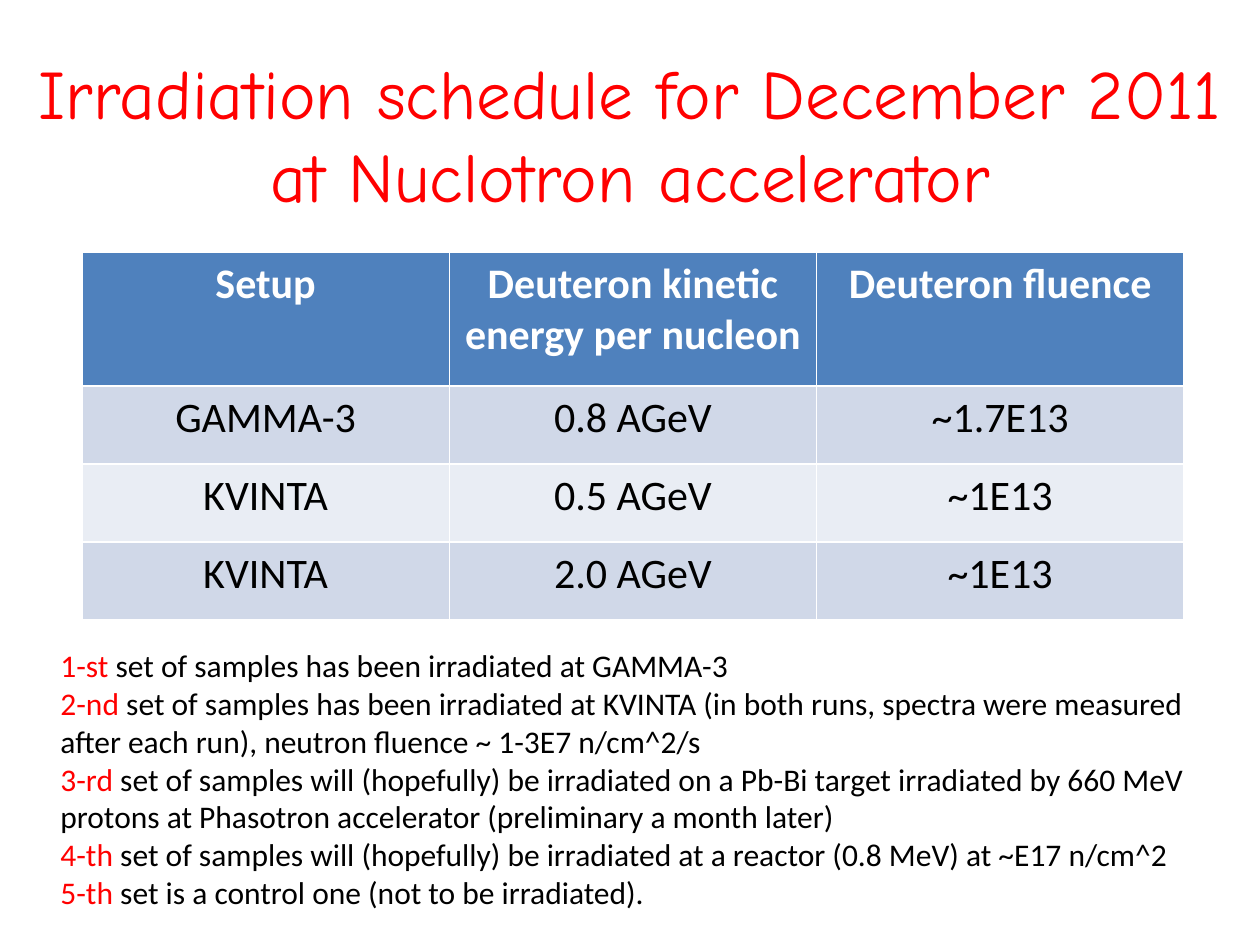
"""Build the irradiation schedule slide with a title, a table and notes on the sample sets."""
from dataclasses import dataclass

from pptx import Presentation
from pptx.dml.color import RGBColor
from pptx.enum.text import MSO_ANCHOR, MSO_AUTO_SIZE, PP_ALIGN
from pptx.util import Emu, Pt


@dataclass(frozen=True)
class Theme:
    title_font: str = "Comic Neue"
    body_font: str = "Calibri"
    title_size: float = 39.6
    table_size: int = 24
    note_size: int = 18
    accent: str = "FF0000"
    ink: str = "000000"
    header_ink: str = "FFFFFF"
    header_fill: str = "4F81BD"
    band_fills: tuple = ("D0D8E8", "E9EDF4")


THEME = Theme()
EMU_PER_PX = 914400 / 126


def px(length):
    return Emu(round(length * EMU_PER_PX))


def add_run(paragraph, text, size, color, font=THEME.body_font, bold=False):
    run = paragraph.add_run()
    run.text = text
    run.font.name = font
    run.font.size = Pt(size)
    run.font.bold = bold
    run.font.color.rgb = RGBColor.from_string(color)


deck = Presentation()
deck.slide_width, deck.slide_height = px(1260), px(945)
slide = deck.slides.add_slide(deck.slide_layouts[5])

title = slide.shapes.title
title.left, title.top, title.width, title.height = px(21), px(32), px(1218), px(203)
title.text_frame.word_wrap = True
title.text_frame.auto_size = MSO_AUTO_SIZE.NONE
title.text_frame.vertical_anchor = MSO_ANCHOR.MIDDLE
heading = title.text_frame.paragraphs[0]
heading.alignment = PP_ALIGN.CENTER
add_run(heading, "Irradiation schedule for December 2011 at Nuclotron accelerator",
        THEME.title_size, THEME.accent, THEME.title_font)

schedule = [
    ("Setup", "Deuteron kinetic energy per nucleon", "Deuteron fluence"),
    ("GAMMA-3", "0.8 AGeV", "~1.7E13"),
    ("KVINTA", "0.5 AGeV", "~1E13"),
    ("KVINTA", "2.0 AGeV", "~1E13"),
]
table = slide.shapes.add_table(len(schedule), len(schedule[0]),
                               px(82), px(252), px(1102), px(368)).table
for row_index, entries in enumerate(schedule):
    is_header = row_index == 0
    table.rows[row_index].height = px(134 if is_header else 78)
    fill = THEME.header_fill if is_header else THEME.band_fills[(row_index - 1) % 2]
    ink = THEME.header_ink if is_header else THEME.ink
    for column_index, entry in enumerate(entries):
        cell = table.cell(row_index, column_index)
        cell.fill.solid()
        cell.fill.fore_color.rgb = RGBColor.from_string(fill)
        cell_line = cell.text_frame.paragraphs[0]
        cell_line.alignment = PP_ALIGN.CENTER
        add_run(cell_line, entry, THEME.table_size, ink, bold=is_header)

sample_notes = [
    ("1-st", " set of samples has been irradiated at GAMMA-3"),
    ("2-nd", " set of samples has been irradiated at KVINTA (in both runs, spectra were measured"),
    ("", "after each run), neutron fluence ~ 1-3E7 n/cm^2/s"),
    ("3-rd", " set of samples will (hopefully) be irradiated on a Pb-Bi target irradiated by 660 MeV"),
    ("", "protons at Phasotron accelerator (preliminary a month later)"),
    ("4-th", " set of samples will (hopefully) be irradiated at a reactor (0.8 MeV) at ~E17 n/cm^2"),
    ("5-th", " set is a control one (not to be irradiated)."),
]
notes_frame = slide.shapes.add_textbox(px(48), px(640), px(1163), px(280)).text_frame
notes_frame.word_wrap = False
notes_frame.auto_size = MSO_AUTO_SIZE.SHAPE_TO_FIT_TEXT
for note_index, (ordinal, statement) in enumerate(sample_notes):
    note_line = notes_frame.add_paragraph() if note_index else notes_frame.paragraphs[0]
    note_line.alignment = PP_ALIGN.LEFT
    if ordinal:
        add_run(note_line, ordinal, THEME.note_size, THEME.accent)
    add_run(note_line, statement, THEME.note_size, THEME.ink)

deck.save("out.pptx")
